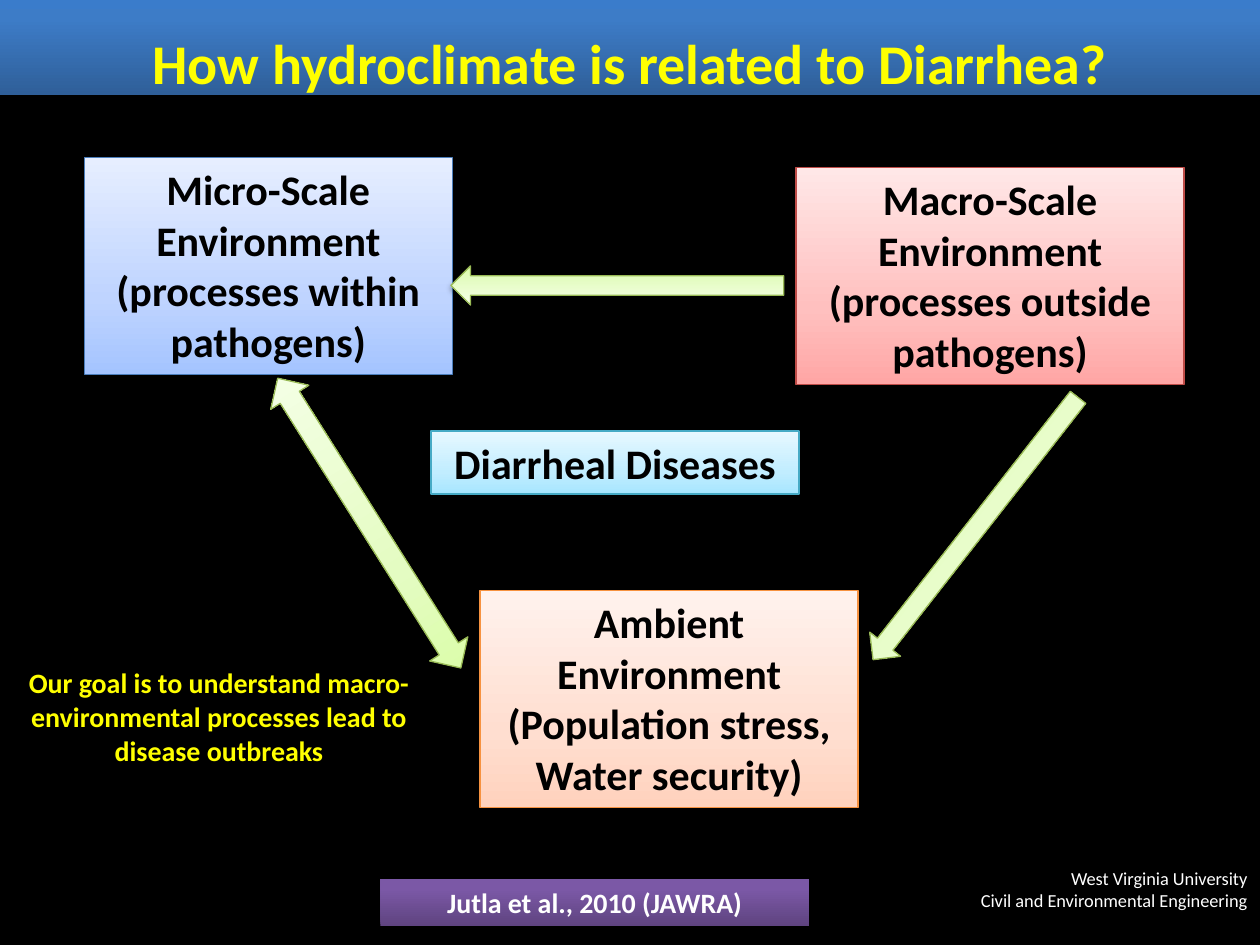
import copy
from dataclasses import dataclass
from typing import Optional

import pptx
import pptx.dml.color
import pptx.enum.shapes
import pptx.enum.text
import pptx.oxml
import pptx.oxml.ns
import pptx.util

Cm = pptx.util.Cm
Pt = pptx.util.Pt
SHAPE = pptx.enum.shapes.MSO_SHAPE
ALIGN = pptx.enum.text.PP_ALIGN
ANCHOR = pptx.enum.text.MSO_ANCHOR
rgb = pptx.dml.color.RGBColor.from_string


@dataclass(frozen=True)
class Tint:
    """Vertical gradient, listed from bottom to top, with its outline."""
    stops: tuple[str, str, str]
    middle: float = 0.35
    line: Optional[str] = None


@dataclass(frozen=True)
class Shadow:
    opacity: int = 38
    blur: float = 3.1
    distance: float = 1.6


@dataclass(frozen=True)
class Theme:
    font: str = "Calibri"
    background: str = "000000"
    dark: str = "000000"
    light: str = "FFFFFF"
    accent: str = "FFFF00"
    title_size: float = 32
    box_size: float = 24
    note_size: float = 16
    footer_size: float = 10.5
    banner: Tint = Tint(("2F5F99", "3D7CC7", "3A7CCB"), 0.8)
    credit: Tint = Tint(("5F4480", "7B58A6", "7C57A8"), 0.8)
    blue: Tint = Tint(("A4C4FF", "BFD4FF", "E6EEFF"), line="4B7EBC")
    red: Tint = Tint(("FFA6A5", "FFC0BF", "FFE7E7"), line="BF4C48")
    orange: Tint = Tint(("FFD2BD", "FFDED0", "FFF2ED"), line="F69240")
    green: Tint = Tint(("DAFDA7", "E4FCC2", "F5FFE7"), line="98B955")
    cyan: Tint = Tint(("A7E6FF", "C1EDFF", "E7F8FF"), line="46AAC5")


@dataclass(frozen=True)
class Area:
    """Position and size in centimetres."""
    left: float
    top: float
    width: float
    height: float

    def lengths(self) -> tuple:
        return Cm(self.left), Cm(self.top), Cm(self.width), Cm(self.height)


@dataclass(frozen=True)
class Box:
    area: Area
    tint: Tint
    text: str


@dataclass(frozen=True)
class Arrow:
    area: Area
    kind: SHAPE
    rotation: float


THEME = Theme()
BOX_HEIGHT = 4.37

BOXES = (
    Box(Area(1.7, 3.18, 7.42, BOX_HEIGHT), THEME.blue,
        "Micro-Scale Environment\n(processes within pathogens)"),
    Box(Area(16.05, 3.38, 7.82, BOX_HEIGHT), THEME.red,
        "Macro-Scale Environment\n(processes outside pathogens)"),
    Box(Area(9.68, 11.91, 7.62, BOX_HEIGHT), THEME.orange,
        "Ambient Environment\n(Population stress, Water security)"),
    Box(Area(8.69, 8.69, 7.42, 1.27), THEME.cyan, "Diarrheal Diseases"),
)

ARROWS = (
    Arrow(Area(9.09, 5.36, 6.71, 0.79), SHAPE.RIGHT_ARROW, 180),
    Arrow(Area(16.31, 10.26, 6.71, 0.79), SHAPE.RIGHT_ARROW, 128),
    Arrow(Area(6.99, 7.09, 0.91, 6.91), SHAPE.UP_DOWN_ARROW, 327.7),
)


def write(frame, text: str, size: float, color: str, bold: bool = True,
          align: ALIGN = ALIGN.CENTER, anchor: ANCHOR = ANCHOR.TOP,
          wrap: bool = True) -> None:
    frame.text = text
    frame.word_wrap = wrap
    frame.vertical_anchor = anchor
    for paragraph in frame.paragraphs:
        paragraph.alignment = align
        for run in paragraph.runs:
            run.font.name = THEME.font
            run.font.size = Pt(size)
            run.font.bold = bold
            run.font.color.rgb = rgb(color)


def add_shadow(shape, shadow: Shadow) -> None:
    shape.shadow.inherit = False
    effects = shape._element.spPr.find(pptx.oxml.ns.qn("a:effectLst"))
    effects.append(pptx.oxml.parse_xml(
        f'<a:outerShdw {pptx.oxml.ns.nsdecls("a")} blurRad="{Pt(shadow.blur)}" '
        f'dist="{Pt(shadow.distance)}" dir="5400000" rotWithShape="0">'
        f'<a:srgbClr val="000000"><a:alpha val="{shadow.opacity * 1000}"/>'
        '</a:srgbClr></a:outerShdw>'))


def add_tinted(slide, kind: SHAPE, area: Area, tint: Tint,
               shadow: Shadow = Shadow()):
    shape = slide.shapes.add_shape(kind, *area.lengths())
    shape.fill.gradient()
    shape.fill.gradient_angle = 90
    # The default gradient has two stops; a third is needed
    stop_list = shape._element.spPr.find(".//" + pptx.oxml.ns.qn("a:gsLst"))
    stop_list.append(copy.deepcopy(stop_list[0]))
    positions = (0, tint.middle, 1)
    for stop, color, position in zip(shape.fill.gradient_stops, tint.stops, positions):
        stop.color.rgb = rgb(color)
        stop.position = position
    if tint.line:
        shape.line.color.rgb = rgb(tint.line)
        shape.line.width = Pt(0.75)
    else:
        shape.line.fill.background()
    add_shadow(shape, shadow)
    return shape


def add_box(slide, box: Box) -> None:
    shape = add_tinted(slide, SHAPE.RECTANGLE, box.area, box.tint)
    write(shape.text_frame, box.text, THEME.box_size, THEME.dark)


def add_arrow(slide, arrow: Arrow) -> None:
    shape = add_tinted(slide, arrow.kind, arrow.area, THEME.green)
    shape.rotation = arrow.rotation


def main() -> None:
    deck = pptx.Presentation()
    deck.slide_width, deck.slide_height = Cm(25.4), Cm(19.05)
    slide = deck.slides.add_slide(deck.slide_layouts[5])
    slide.background.fill.solid()
    slide.background.fill.fore_color.rgb = rgb(THEME.background)

    # Affiliation and title banner
    affiliation = slide.shapes.add_textbox(*Area(19.43, 17.35, 5.97, 1.6).lengths())
    write(affiliation.text_frame,
          "West Virginia University\nCivil and Environmental Engineering",
          THEME.footer_size, THEME.light, bold=False, align=ALIGN.RIGHT, wrap=False)
    add_tinted(slide, SHAPE.RECTANGLE, Area(0, 0, 25.4, 1.91), THEME.banner,
               Shadow(15, 12, 25))

    # Environments and the links between them
    for box in BOXES:
        add_box(slide, box)
    for arrow in ARROWS:
        add_arrow(slide, arrow)

    # Title, brought in front of the banner
    title = slide.shapes.title
    title.left, title.top, title.width, title.height = Area(0, 0.2, 25.4, 2.11).lengths()
    write(title.text_frame, "How hydroclimate is related to Diarrhea?",
          THEME.title_size, THEME.accent, anchor=ANCHOR.MIDDLE)
    slide.shapes._spTree.append(title._element)

    # Citation and goal
    citation = add_tinted(slide, SHAPE.RECTANGLE, Area(7.67, 17.73, 8.64, 0.94),
                          THEME.credit, Shadow(35, 3.1, 1.8))
    write(citation.text_frame, "Jutla et al., 2010 (JAWRA)",
          THEME.note_size, THEME.light)
    goal = slide.shapes.add_textbox(*Area(0.2, 12.6, 8.43, 3.68).lengths())
    write(goal.text_frame,
          "Our goal is to understand macro-environmental processes lead to "
          "disease outbreaks",
          THEME.note_size, THEME.accent, anchor=ANCHOR.MIDDLE)

    deck.save("out.pptx")


if __name__ == "__main__":
    main()
